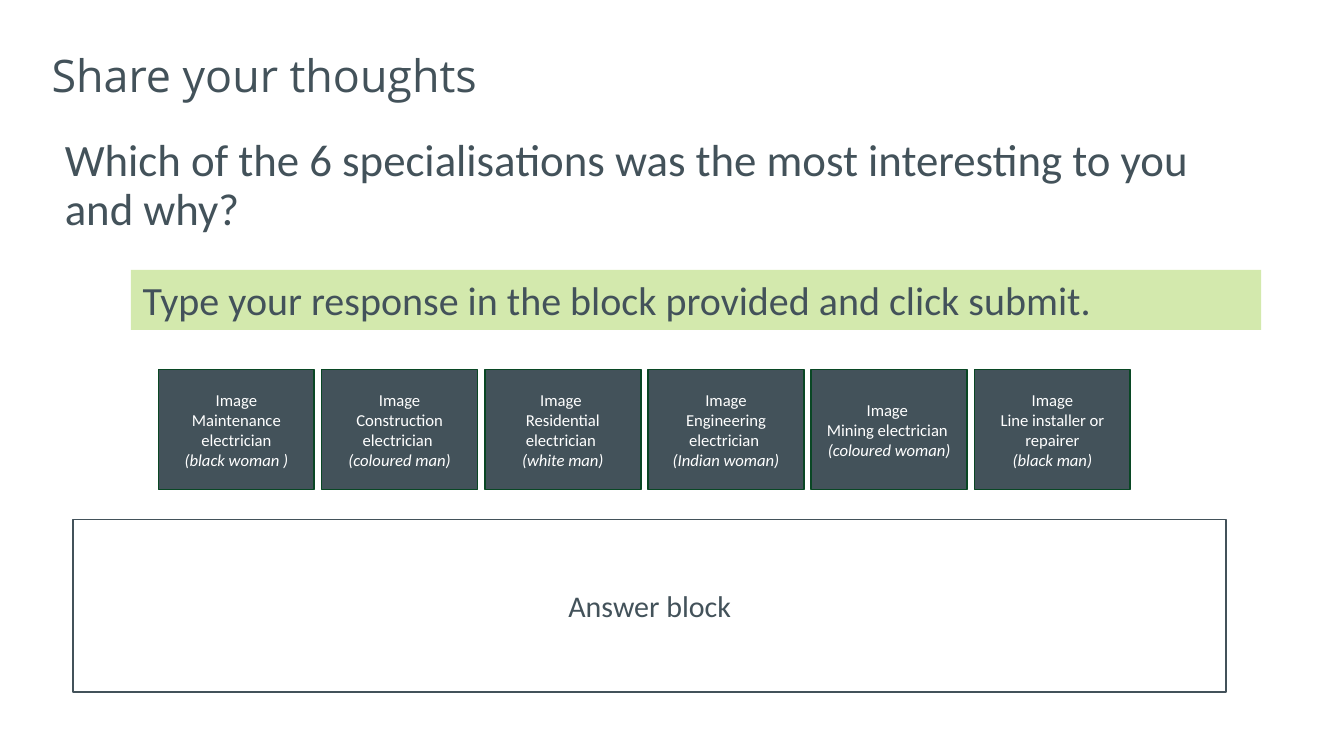
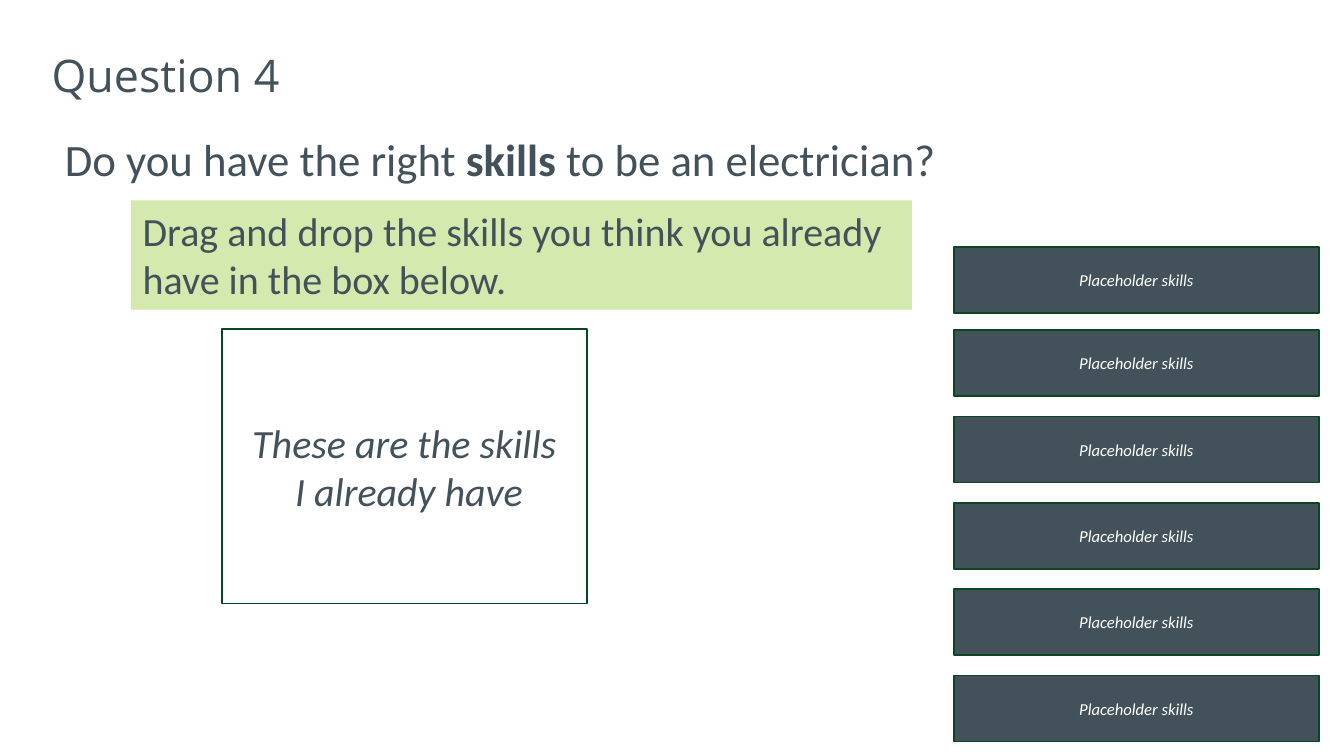
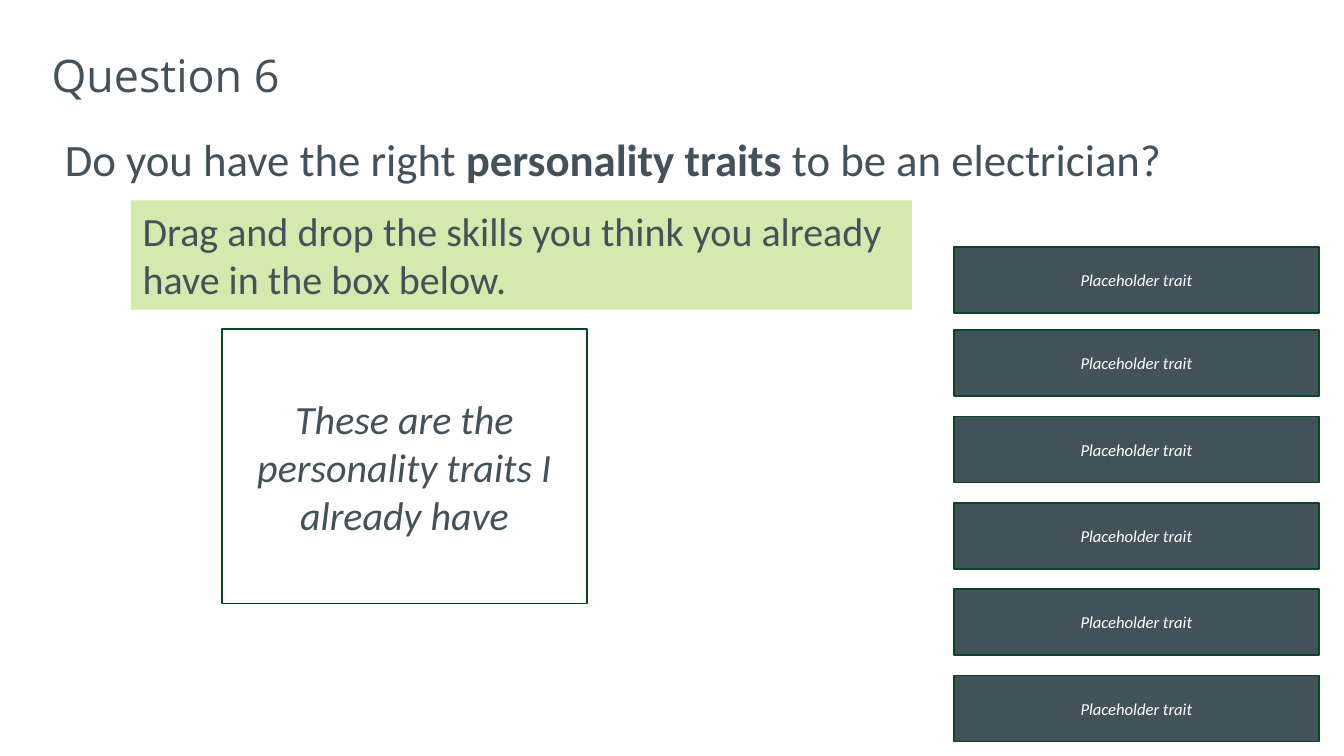
from lxml import etree
from pptx import Presentation
from pptx.dml.color import RGBColor
from pptx.enum.shapes import MSO_SHAPE
from pptx.enum.text import MSO_ANCHOR, MSO_AUTO_SIZE, PP_ALIGN
from pptx.oxml.ns import qn
from pptx.util import Inches, Pt

SLATE, GREEN, LIME, WHITE = "43525A", "094724", "D3E9AD", "FFFFFF"
BODY_FONT, TITLE_FONT = "Calibri", "Open Sans"
HEADING_SIZE = 26.9
TITLE_BOX = (0.33, 0.31, 5.83, 0.59)
QUESTION_BOX = (0.44, 1.1, 10.15, 1.03)
BAND_LEFT = 1.09

# Text is a list of paragraphs, each a list of (text, style) runs; style is "", "b" or "i".
THOUGHTS = {
    "title": "Share your thoughts",
    "question": [("Which of the 6 specialisations was the most interesting to you and why?", "")],
    "instruction": "Type your response in the block provided and click submit.",
    "answer": "Answer block",
    "cards": [
        ("Image", "Maintenance electrician", "(black woman )"),
        ("Image", "Construction electrician ", "(coloured man)"),
        ("Image ", "Residential electrician ", "(white man)"),
        ("Image", "Engineering electrician ", "(Indian woman)"),
        ("Image ", "Mining electrician ", "(coloured woman)"),
        ("Image", "Line installer or repairer", "(black man)"),
    ],
}
DRAG_INSTRUCTION = "Drag and drop the skills you think you already have in the box below."
DRAG_QUESTIONS = [
    {
        "title": "Question 4",
        "question": [("Do you have the right ", ""), ("skills", "b"),
                     (" to be an electrician?", "")],
        "target": ["These are the skills", " I already have"],
        "item": "Placeholder skills",
    },
    {
        "title": "Question 6",
        "question": [("Do you have the right ", ""), ("personality traits ", "b"),
                     ("to be an electrician?", "")],
        "target": ["These are the personality traits I already have"],
        "item": "Placeholder trait",
    },
]

CARD_SIZE = (1.3, 1)
CARD_LEFT, CARD_TOP, CARD_STEP = 1.32, 3.08, 1.36
ITEM_LEFT, ITEM_SIZE = 7.95, (3.04, 0.55)
ITEM_TOPS = [2.06] + [2.75 + 0.72 * row for row in range(5)]


def rgb(color):
    return RGBColor.from_string(color)


def place(sp, box):
    sp.left, sp.top, sp.width, sp.height = map(Inches, box)


def write(tf, paragraphs, size, color=SLATE, font=BODY_FONT, align=PP_ALIGN.LEFT,
          anchor=MSO_ANCHOR.TOP, inset=(0.1, 0.05), line=1.0, before=0):
    tf.word_wrap = True
    tf.auto_size = MSO_AUTO_SIZE.NONE
    tf.vertical_anchor = anchor
    tf.margin_left = tf.margin_right = Inches(inset[0])
    tf.margin_top = tf.margin_bottom = Inches(inset[1])
    for i, runs in enumerate(paragraphs):
        p = tf.add_paragraph() if i else tf.paragraphs[0]
        p.alignment, p.line_spacing, p.space_before = align, line, Pt(before)
        for text, style in runs:
            r = p.add_run()
            r.text = text
            r.font.name, r.font.size = font, Pt(size)
            r.font.bold, r.font.italic = style == "b", style == "i"
            r.font.color.rgb = rgb(color)


def add_box(s, box, paragraphs, size, fill=None, outline=None, **text_format):
    sp = s.shapes.add_shape(MSO_SHAPE.RECTANGLE, *map(Inches, box))
    sp.shadow.inherit = False
    if fill:
        sp.fill.solid()
        sp.fill.fore_color.rgb = rgb(fill)
    else:
        sp.fill.background()
    if outline:
        sp.line.color.rgb = rgb(outline)
        sp.line.width = Pt(1)
    else:
        sp.line.fill.background()
    write(sp.text_frame, paragraphs, size, **text_format)


def add_tile(s, box, paragraphs, size=10, color=WHITE, fill=SLATE):
    """Green-edged box with centred text."""
    add_box(s, box, paragraphs, size, fill, GREEN, color=color, align=PP_ALIGN.CENTER,
            anchor=MSO_ANCHOR.MIDDLE, inset=(0.08, 0.04))


def add_band(s, text, top, width, height):
    add_box(s, (BAND_LEFT, top, width, height), [[(text, "")]], 24, LIME)


def add_question_slide(prs, content):
    s = prs.slides.add_slide(prs.slide_layouts[1])
    title, question = s.placeholders
    write(title.text_frame, [[(content["title"], "")]], HEADING_SIZE, font=TITLE_FONT,
          anchor=MSO_ANCHOR.BOTTOM, line=0.9)
    write(question.text_frame, [content["question"]], HEADING_SIZE, line=0.9, before=8.4)
    pPr = question.text_frame.paragraphs[0]._p.get_or_add_pPr()
    pPr.set("marL", "0")
    pPr.set("indent", "0")
    etree.SubElement(pPr, qn("a:buNone"))
    return s


def add_thoughts_slide(prs, content):
    s = add_question_slide(prs, content)
    for i, (image, job, person) in enumerate(content["cards"]):
        add_tile(s, (CARD_LEFT + i * CARD_STEP, CARD_TOP, *CARD_SIZE),
                 [[(image, "")], [(job, "")], [(person, "i")]])
    add_box(s, (0.61, 4.33, 9.61, 1.44), [[(content["answer"], "")]], 18, outline=SLATE,
            align=PP_ALIGN.CENTER, anchor=MSO_ANCHOR.MIDDLE)
    add_band(s, content["instruction"], 2.25, 9.42, 0.5)


def add_drag_slide(prs, content):
    s = add_question_slide(prs, content)
    for top in ITEM_TOPS:
        add_tile(s, (ITEM_LEFT, top, *ITEM_SIZE), [[(content["item"], "i")]])
    add_tile(s, (1.85, 2.74, 3.04, 2.29), [[(text, "i")] for text in content["target"]],
             size=24, color=SLATE, fill=None)
    add_band(s, DRAG_INSTRUCTION, 1.67, 6.51, 0.91)


def main():
    prs = Presentation()
    prs.slide_width, prs.slide_height = Inches(11.2), Inches(6.3)
    title, question = list(prs.slide_layouts[1].placeholders)[:2]
    place(title, TITLE_BOX)
    place(question, QUESTION_BOX)
    add_thoughts_slide(prs, THOUGHTS)
    for content in DRAG_QUESTIONS:
        add_drag_slide(prs, content)
    prs.save("out.pptx")


if __name__ == "__main__":
    main()
